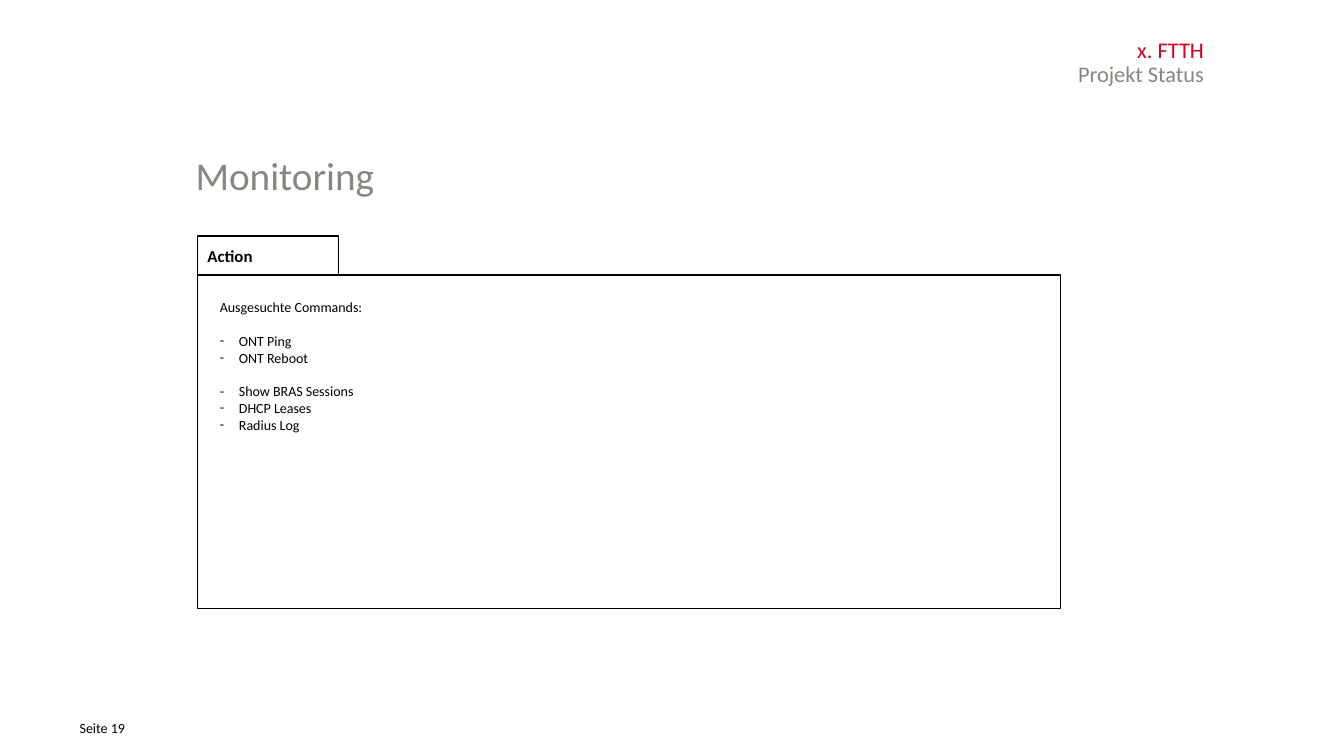
"""Build the monitoring slide of an FTTH project status deck."""
from lxml import etree
from pptx import Presentation
from pptx.dml.color import RGBColor
from pptx.enum.shapes import MSO_SHAPE
from pptx.enum.text import MSO_ANCHOR, PP_ALIGN
from pptx.oxml.ns import qn
from pptx.util import Inches, Pt

RECTANGLE = MSO_SHAPE.RECTANGLE
MIDDLE = MSO_ANCHOR.MIDDLE
LEFT = PP_ALIGN.LEFT
RIGHT = PP_ALIGN.RIGHT

COLORS = {"red": "D4021D", "gray": "878781", "black": "000000", "white": "FFFFFF"}
FONT = "Calibri"
LINE_GAP = 12.2
COMMAND_GROUPS = [
    ["ONT Ping", "ONT Reboot"],
    ["Show BRAS Sessions", "DHCP Leases", "Radius Log"],
]


class SlideBuilder:
    """Holds the style and the slide being built."""

    def __init__(self, slide):
        self.slide = slide

    def color(self, name):
        return RGBColor.from_string(COLORS[name])

    def add_run(self, paragraph, text, size, color="black", bold=False):
        run = paragraph.add_run()
        run.text = text
        run.font.name = FONT
        run.font.size = Pt(size)
        run.font.bold = bold
        run.font.color.rgb = self.color(color)

    def text(self, box, text, size, color="black", align=LEFT, spacing=None):
        shape = self.slide.shapes.add_textbox(*map(Inches, box))
        frame = shape.text_frame
        frame.word_wrap = True
        frame.margin_left = frame.margin_right = 0
        frame.margin_top = frame.margin_bottom = 0
        paragraph = frame.paragraphs[0]
        paragraph.alignment = align
        paragraph.line_spacing = spacing
        self.add_run(paragraph, text, size, color)
        return frame

    def rectangle(self, box):
        shape = self.slide.shapes.add_shape(RECTANGLE, *map(Inches, box))
        shape.shadow.inherit = False
        shape.fill.solid()
        shape.fill.fore_color.rgb = self.color("white")
        shape.line.color.rgb = self.color("black")
        shape.line.width = Pt(1)
        return shape

    def tab(self, box, text):
        frame = self.rectangle(box).text_frame
        frame.vertical_anchor = MIDDLE
        paragraph = frame.paragraphs[0]
        paragraph.alignment = LEFT
        self.add_run(paragraph, text, 12, bold=True)

    def bullet(self, frame, text, space_before):
        paragraph = frame.add_paragraph()
        paragraph.space_before = Pt(space_before)
        properties = paragraph._p.get_or_add_pPr()
        properties.set("marL", str(Inches(0.19)))
        properties.set("indent", str(Inches(-0.19)))
        etree.SubElement(properties, qn("a:buFont"), typeface=FONT)
        etree.SubElement(properties, qn("a:buChar"), char="-")
        self.add_run(paragraph, text, 10)


def main():
    presentation = Presentation()
    presentation.slide_width = Inches(13.33)
    presentation.slide_height = Inches(7.5)
    slide = presentation.slides.add_slide(presentation.slide_layouts[6])
    builder = SlideBuilder(slide)

    builder.text((1.94, 1.55, 9.21, 0.47), "Monitoring", 28, "gray", spacing=0.9)
    builder.text((6.74, 0.36, 5.2, 0.24), "x. FTTH", 16, "red", RIGHT, Pt(19.2))
    builder.text((6.74, 0.6, 5.2, 0.23), "Projekt Status", 16, "gray", RIGHT, Pt(19.2))
    builder.text((0.79, 7.14, 1, 0.16), "Seite 19", 10)

    builder.rectangle((1.96, 2.73, 8.56, 3.31))
    builder.tab((1.96, 2.34, 1.4, 0.39), "Action")
    commands = builder.text((2.18, 2.96, 7.72, 2.28), "Ausgesuchte Commands:", 10)
    for group in COMMAND_GROUPS:
        for index, command in enumerate(group):
            builder.bullet(commands, command, 0 if index else LINE_GAP)

    presentation.save("out.pptx")


if __name__ == "__main__":
    main()
